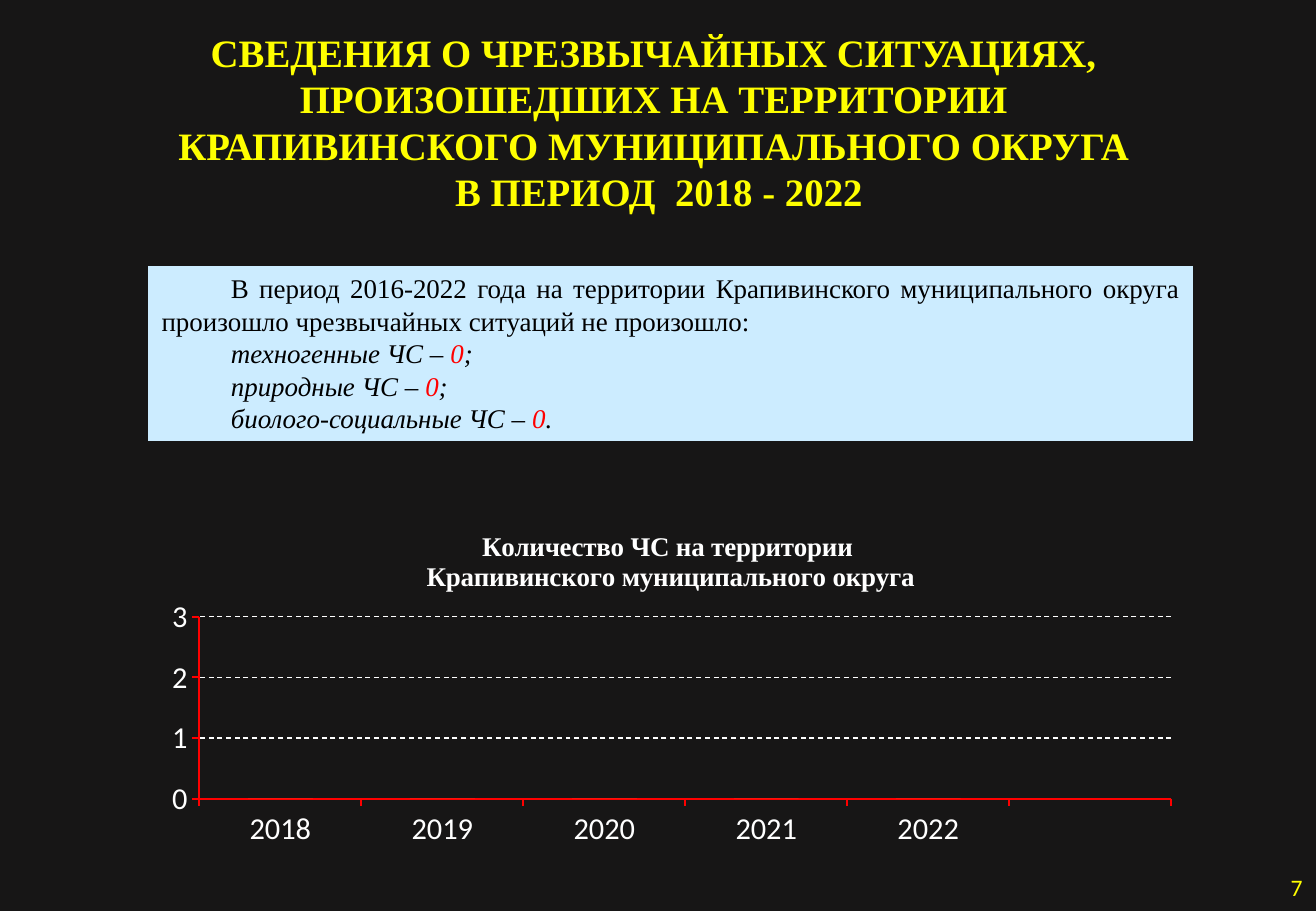
import pptx
import pptx.chart.data
import pptx.dml.color
import pptx.enum.chart
import pptx.enum.dml
import pptx.enum.shapes
import pptx.enum.text
import pptx.oxml
import pptx.util
from pptx.util import Inches

RGBColor = pptx.dml.color.RGBColor
DARK = RGBColor(0x17, 0x16, 0x16)
YELLOW = RGBColor(0xFF, 0xFF, 0x00)
PALE_BLUE = RGBColor(0xCC, 0xEC, 0xFF)
BLACK = RGBColor(0x00, 0x00, 0x00)
RED = RGBColor(0xFF, 0x00, 0x00)
WHITE = RGBColor(0xFF, 0xFF, 0xFF)
SERIES_BLUE = RGBColor(0xC2, 0xDF, 0xFD)
COLUMN_ORANGE = RGBColor(0xF2, 0x90, 0x54)
SERIF = "Times New Roman"
SANS = "Calibri"
ALIGN = pptx.enum.text.PP_ALIGN
ANCHOR = pptx.enum.text.MSO_ANCHOR


def style_font(font, name, size, color, bold=False, italic=False):
    font.name = name
    font.size = pptx.util.Pt(size)
    font.color.rgb = color
    font.bold = bold
    font.italic = italic


def prepare_frame(box, anchor):
    """Turn on wrapping and apply the margins shared by all text on the slide."""
    frame = box.text_frame
    frame.word_wrap = True
    frame.vertical_anchor = anchor
    frame.margin_left = frame.margin_right = Inches(0.12)
    frame.margin_top = frame.margin_bottom = Inches(0.06)
    return frame


deck = pptx.Presentation()
deck.slide_width = Inches(10.83)
deck.slide_height = Inches(7.5)
page = deck.slides.add_slide(deck.slide_layouts[6])
page.background.fill.solid()
page.background.fill.fore_color.rgb = DARK

# Heading
heading = page.shapes.add_textbox(Inches(0.01), Inches(0.36), Inches(10.83), Inches(1.28))
frame = prepare_frame(heading, ANCHOR.MIDDLE)
frame.text = "\n".join([
    "СВЕДЕНИЯ О ЧРЕЗВЫЧАЙНЫХ СИТУАЦИЯХ, ",
    "ПРОИЗОШЕДШИХ НА ТЕРРИТОРИИ ",
    "КРАПИВИНСКОГО МУНИЦИПАЛЬНОГО ОКРУГА ",
    "В ПЕРИОД  2018 - 2022",
])
for para in frame.paragraphs:
    para.alignment = ALIGN.CENTER
    style_font(para.runs[0].font, SERIF, 23, YELLOW, bold=True)

# Summary of emergencies by kind
summary = page.shapes.add_shape(
    pptx.enum.shapes.MSO_SHAPE.RECTANGLE, Inches(1.21), Inches(2.18), Inches(8.62), Inches(1.46))
summary.shadow.inherit = False
summary.fill.solid()
summary.fill.fore_color.rgb = PALE_BLUE
summary.line.color.rgb = DARK
summary.line.width = pptx.util.Pt(1.5)
frame = prepare_frame(summary, ANCHOR.TOP)
frame.auto_size = pptx.enum.text.MSO_AUTO_SIZE.SHAPE_TO_FIT_TEXT
frame.text = ("В период 2016-2022 года на территории Крапивинского муниципального округа "
              "произошло чрезвычайных ситуаций не произошло: ")
style_font(frame.paragraphs[0].runs[0].font, SERIF, 16, BLACK)
for kind, ending in [("техногенные", "; "), ("природные", "; "), ("биолого-социальные", ". ")]:
    para = frame.add_paragraph()
    for text, color in [(f"{kind} ЧС – ", BLACK), ("0", RED), (ending, BLACK)]:
        span = para.add_run()
        span.text = text
        style_font(span.font, SERIF, 16, color, italic=True)
for para in frame.paragraphs:
    para.alignment = ALIGN.JUSTIFY
    properties = para._p.get_or_add_pPr()
    properties.set("marL", "0")
    properties.set("indent", str(Inches(0.57)))

# Emergencies per year
data = pptx.chart.data.CategoryChartData()
data.categories = ["2018", "2019", "2020", "2021", "2022", ""]
data.add_series("Series 1", [0, 0, 0, 0, 0, None])
chart = page.shapes.add_chart(
    pptx.enum.chart.XL_CHART_TYPE.COLUMN_CLUSTERED,
    Inches(1.22), Inches(4.22), Inches(8.6), Inches(2.91), data).chart
style_font(chart.font, SANS, 18, WHITE)
chart.has_legend = False
chart.has_title = True
title_frame = chart.chart_title.text_frame
title_frame.text = "Количество ЧС на территории \nКрапивинского муниципального округа"
for para in title_frame.paragraphs:
    style_font(para.runs[0].font, SERIF, 16, WHITE, bold=True)
chart.chart_title.include_in_layout = False

plot = chart.plots[0]
plot.gap_width = 150
plot.vary_by_categories = False
series = plot.series[0]
series.format.fill.solid()
series.format.fill.fore_color.rgb = SERIES_BLUE
for index in range(6):
    fill = series.points[index].format.fill
    fill.solid()
    fill.fore_color.rgb = COLUMN_ORANGE

for axis in (chart.category_axis, chart.value_axis):
    axis.major_tick_mark = pptx.enum.chart.XL_TICK_MARK.OUTSIDE
    axis.minor_tick_mark = pptx.enum.chart.XL_TICK_MARK.NONE
    axis.format.line.color.rgb = RED
    axis.format.line.width = pptx.util.Pt(1.25)
    style_font(axis.tick_labels.font, SANS, 18, WHITE)
scale = chart.value_axis
scale.minimum_scale = 0
scale.maximum_scale = 3
scale.major_unit = 1
scale.has_major_gridlines = True
grid_line = scale.major_gridlines.format.line
grid_line.color.rgb = WHITE
grid_line.width = pptx.util.Pt(0)
grid_line.dash_style = pptx.enum.dml.MSO_LINE.DASH

plot_area = chart._chartSpace.chart.plotArea
for old_layout in plot_area.findall(pptx.oxml.ns.qn("c:layout")):
    plot_area.remove(old_layout)
plot_area.insert(0, pptx.oxml.parse_xml(
    f'<c:layout {pptx.oxml.ns.nsdecls("c")}><c:manualLayout><c:layoutTarget val="inner"/>'
    '<c:xMode val="edge"/><c:yMode val="edge"/><c:x val="0.049"/><c:y val="0.295"/>'
    '<c:w val="0.93"/><c:h val="0.515"/></c:manualLayout></c:layout>'))

# Page number
number = page.shapes.add_textbox(Inches(8.31), Inches(7.1), Inches(2.53), Inches(0.4))
frame = prepare_frame(number, ANCHOR.MIDDLE)
frame.text = "7"
frame.paragraphs[0].alignment = ALIGN.RIGHT
style_font(frame.paragraphs[0].runs[0].font, SANS, 14, YELLOW)

deck.save("out.pptx")
